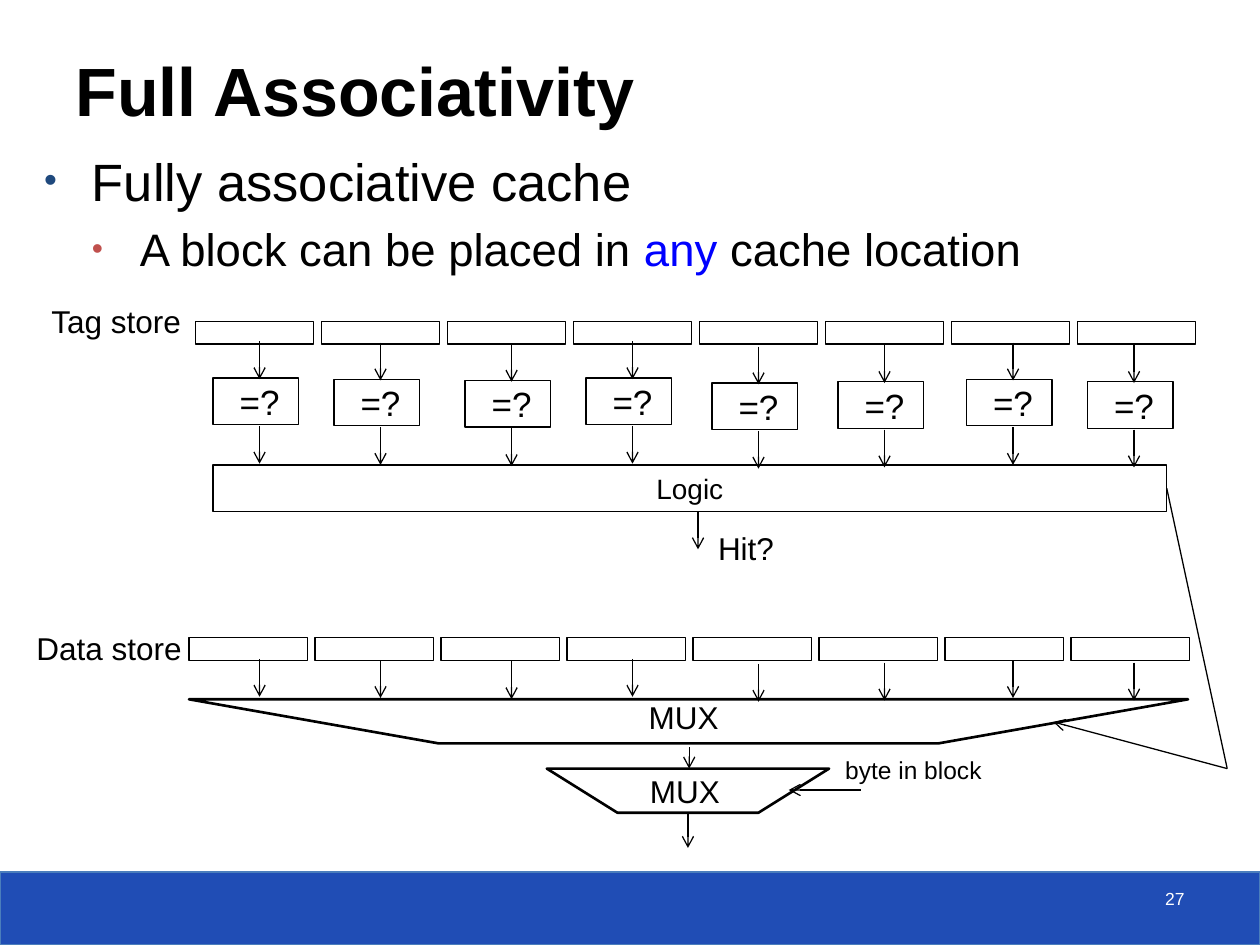
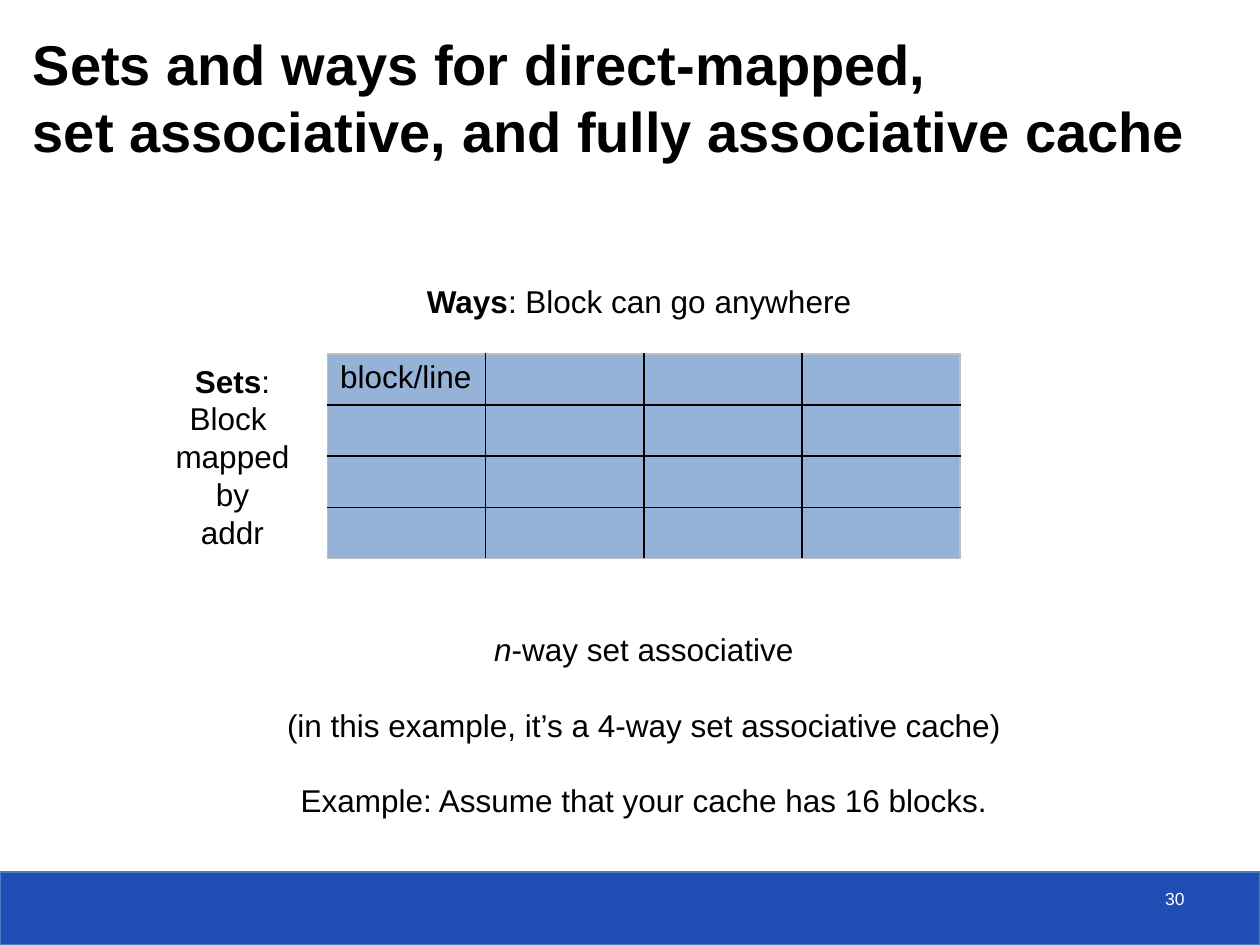
from lxml import etree
from pptx import Presentation
from pptx import util as u
from pptx.dml.color import RGBColor
from pptx.enum import shapes, text
from pptx.oxml import ns

FONT = "Arial"
COLORS = {
    "text": "000000", "band": "204DB5", "band_line": "4B7EBC", "number": "FFFFFF",
    "bullet": "1F497D", "sub_bullet": "C0504D", "accent": "0000FF",
    "cell": "95B3D7", "table_edge": "BFBFBF",
}
COLUMN_X = [2.06, 3.02, 4.06, 5.02, 6.02, 7.02, 8.04, 9.0]
COLUMN_DROP = [0, 0.01, 0.02, 0, 0.04, 0.03, 0.01, 0.03]


def rgb(name):
    return RGBColor.from_string(COLORS[name])


def inches(*lengths):
    return [u.Inches(n) for n in lengths]


def sub(parent, tag, **attrs):
    return etree.SubElement(parent, ns.qn(tag), attrs)


def add_runs(p, runs, size, color="text"):
    """Add (text, style) runs; a newline in a text becomes a line break."""
    for words, style in runs:
        for i, line in enumerate(words.split("\n")):
            if i:
                p.add_line_break()
            if not line:
                continue
            r = p.add_run()
            r.text = line
            r.font.name, r.font.size = FONT, u.Pt(size)
            r.font.bold = style == "bold"
            r.font.italic = style == "italic"
            r.font.color.rgb = rgb(style if style in COLORS else color)


def add_label(s, box, paragraphs, size=18, align="LEFT", color="text", wrap=False, gap=0):
    tf = s.shapes.add_textbox(*inches(*box)).text_frame
    tf.word_wrap = wrap
    for i, runs in enumerate(paragraphs):
        p = tf.paragraphs[0] if i == 0 else tf.add_paragraph()
        p.alignment = text.PP_ALIGN[align]
        if i:
            p.space_before = u.Pt(gap)
        add_runs(p, runs, size, color)


def outline(sp, width=0.75):
    sp.shadow.inherit = False
    sp.fill.background()
    sp.line.color.rgb = rgb("text")
    sp.line.width = u.Pt(width)


def add_box(s, box, words="", size=16, left_inset=0):
    sp = s.shapes.add_shape(shapes.MSO_SHAPE.RECTANGLE, *inches(*box))
    outline(sp)
    if words:
        tf = sp.text_frame
        tf.margin_left = u.Inches(left_inset)
        tf.margin_top = tf.margin_right = tf.margin_bottom = 0
        tf.vertical_anchor = text.MSO_ANCHOR.MIDDLE
        p = tf.paragraphs[0]
        p.alignment = text.PP_ALIGN.CENTER
        add_runs(p, [(words, None)], size)
    return sp


def add_line(s, start, end, arrow=True):
    cx = s.shapes.add_connector(shapes.MSO_CONNECTOR.STRAIGHT, *inches(*start, *end))
    cx.line.color.rgb = rgb("text")
    cx.line.width = u.Pt(0.75)
    if arrow:
        sub(cx.line._get_or_add_ln(), "a:tailEnd", type="arrow")
    sub(cx.element.spPr, "a:effectLst")
    return cx


def add_down_arrow(s, x, y, length=0.3):
    add_line(s, (x, y), (x, y + length))


def add_mux(s, x, y, w, h, label_x, label_y):
    points = [(x + w, y), (x + 0.75 * w, y + h), (x + 0.25 * w, y + h), (x, y)]
    points = [inches(*point) for point in points]
    builder = s.shapes.build_freeform(*points[0])
    builder.add_line_segments(points[1:], close=True)
    outline(builder.convert_to_shape(), 1.5)
    add_label(s, (label_x, label_y, 0.89, 0.4), [[("MUX", None)]], wrap=True)


def add_store(s, x, y, name, label_box):
    for i in range(8):
        add_box(s, (x + i, y, 0.94, 0.18))
    add_label(s, label_box, [[(name, None)]])


def add_tag_lookup(s, x, y):
    """Tag store, comparators and hit logic; x, y is the first tag cell's corner."""
    add_store(s, x, y, "Tag store", (x - 1.24, y - 0.2, 1.24, 0.4))
    for column, drop in zip(COLUMN_X, COLUMN_DROP):
        top = y + drop
        add_box(s, (column - 0.37, top + 0.45, 0.68, 0.37), "=?", 20, left_inset=0.06)
        add_down_arrow(s, column, top + 0.16)
        add_down_arrow(s, column, top + 0.83)
    logic = add_box(s, (x + 0.14, y + 1.14, 7.57, 0.37), "Logic")
    add_label(s, (x + 4.05, y + 1.6, 0.65, 0.4), [[("Hit?", None)]])
    add_down_arrow(s, x + 3.99, y + 1.51)
    return logic


def add_data_select(s, x, y, logic):
    """Data store and both muxes; x, y is the first data cell's corner."""
    add_store(s, x, y, "Data store", (x - 1.31, y - 0.12, 1.37, 0.4))
    for column, drop in zip(COLUMN_X, COLUMN_DROP):
        add_down_arrow(s, column, y + 0.17 + drop)
    add_mux(s, x, y + 0.49, 7.93, 0.35, x + 3.55, y + 0.43)
    add_down_arrow(s, x + 3.97, y + 0.87, 0.17)
    add_mux(s, x + 2.84, y + 1.04, 2.24, 0.35, x + 3.56, y + 1.02)
    add_down_arrow(s, x + 3.96, y + 1.39, 0.28)
    add_label(s, (x + 5.11, y + 0.88, 1.47, 0.34), [[("byte in block", None)]], 14, wrap=True)
    add_line(s, (x + 5.33, y + 1.21), (x + 4.76, y + 1.21))
    corner = (x + 8.24, y + 1.04)
    select = add_line(s, (x + 7.76, y - 1.18), corner, arrow=False)
    select.begin_connect(logic, 3)
    add_line(s, corner, (x + 6.86, y + 0.67))


def place(sp, box):
    sp.left, sp.top, sp.width, sp.height = inches(*box)
    sp.text_frame.auto_size = text.MSO_AUTO_SIZE.NONE
    return sp.text_frame


def set_title(s, words, box, size):
    tf = place(s.shapes.title, box)
    tf.vertical_anchor = text.MSO_ANCHOR.BOTTOM
    p = tf.paragraphs[0]
    p.alignment = text.PP_ALIGN.LEFT
    add_runs(p, [(words, "bold")], size)


def set_bullets(s, box, items):
    tf = place(s.placeholders[1], box)
    for i, (runs, size, color) in enumerate(items):
        p = tf.paragraphs[0] if i == 0 else tf.add_paragraph()
        p.level = i
        p.space_before = u.Pt(5.5 if i else 0)
        pPr = p._p.get_or_add_pPr()
        pPr.set("marL", str(u.Inches(0.38 * (i + 1))))
        pPr.set("indent", str(u.Inches(-0.38)))
        sub(sub(pPr, "a:buClr"), "a:srgbClr", val=COLORS[color])
        sub(pPr, "a:buSzPct", val="70000")
        sub(pPr, "a:buFont", typeface=FONT)
        sub(pPr, "a:buChar", char="•")
        add_runs(p, runs, size)


def add_cell_borders(cell, edges):
    """Draw the borders of a cell from a dict of side to colour name."""
    tcPr = cell._tc.get_or_add_tcPr()
    for side, color in edges.items():
        ln = sub(tcPr, f"a:ln{side}", w=str(u.Pt(1)))
        sub(sub(ln, "a:solidFill"), "a:srgbClr", val=COLORS[color])


def add_cache_table(s, x, y, n=4):
    table = s.shapes.add_table(n, n, *inches(x, y, 5.02, 1.62)).table
    table.first_row = table.horz_banding = False
    for row in range(n):
        for col in range(n):
            cell = table.cell(row, col)
            at_edge = {"L": col == 0, "R": col == n - 1, "T": row == 0, "B": row == n - 1}
            add_cell_borders(cell, {side: "table_edge" if edge else "text"
                                    for side, edge in at_edge.items()})
            cell.fill.solid()
            cell.fill.fore_color.rgb = rgb("cell")
    add_runs(table.cell(0, 0).text_frame.paragraphs[0], [("block/line", None)], 18)


def add_master_band(prs, s):
    """Make the footer band on a slide and move it to the master."""
    band = s.shapes.add_shape(shapes.MSO_SHAPE.RECTANGLE, *inches(0, 6.92, 10, 0.58))
    band.shadow.inherit = False
    band.fill.solid()
    band.fill.fore_color.rgb = rgb("band")
    band.line.color.rgb = rgb("band_line")
    band.line.width = u.Pt(0.75)
    band.element.nvSpPr.cNvPr.set("id", "20")
    prs.slide_master.shapes.element.append(band.element)


def add_number(s, number):
    add_label(s, (7.17, 7, 2.33, 0.33), [[(number, None)]], 10, "RIGHT", "number", wrap=True)


def build_full_associativity(prs):
    s = prs.slides.add_slide(prs.slide_layouts[1])
    add_master_band(prs, s)
    set_title(s, "Full Associativity", (0.5, 0.25, 8.17, 0.83), 39)
    set_bullets(s, (0.25, 1.13, 9.42, 5.64), [
        ([("Fully associative cache", None)], 30, "bullet"),
        ([("A block can be placed in ", None), ("any", "accent"),
          (" cache location", None)], 26, "sub_bullet"),
    ])
    logic = add_tag_lookup(s, 1.55, 2.55)
    add_data_select(s, 1.5, 5.06, logic)
    add_number(s, "27")


def build_sets_and_ways(prs):
    s = prs.slides.add_slide(prs.slide_layouts[5])
    set_title(s, "Sets and ways for direct-mapped,\nset associative, and fully associative cache",
              (0.16, 0.52, 9.69, 0.83), 32)
    add_cache_table(s, 2.6, 2.81)
    add_label(s, (1.29, 2.82, 1.11, 1.62),
              [[("Sets", "bold"), (":\nBlock \nmapped\nby\naddr", None)]], align="CENTER")
    add_label(s, (3.29, 2.19, 3.64, 0.4),
              [[("Ways", "bold"), (": Block can go anywhere", None)]])
    add_label(s, (2.15, 4.95, 5.92, 1.62), [
        [("n", "italic"), ("-way set associative", None)],
        [("(in this example, it’s a 4-way set associative cache)", None)],
        [("Example: Assume that your cache has 16 blocks.", None)],
    ], align="CENTER", gap=21.6)
    add_number(s, "30")


def main():
    prs = Presentation()
    prs.slide_width, prs.slide_height = inches(10, 7.5)
    build_full_associativity(prs)
    build_sets_and_ways(prs)
    prs.save("out.pptx")


if __name__ == "__main__":
    main()
